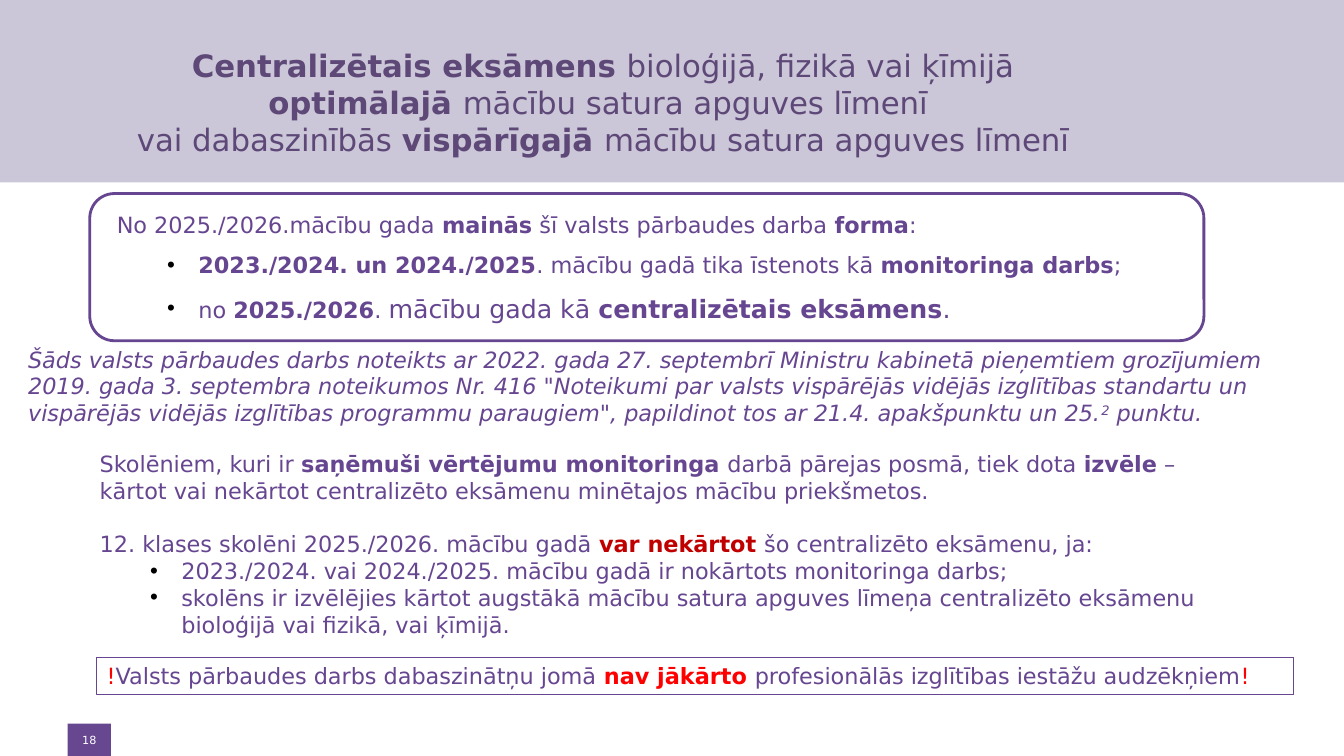
from lxml import etree
from pptx import Presentation
from pptx import util as u
from pptx.dml.color import RGBColor
from pptx.enum import shapes, text
from pptx.oxml.ns import qn

COLORS = {"purple": "664690", "badge": "664790", "title": "5D4878", "band": "CBC7D8",
          "white": "FFFFFF", "black": "000000", "dark red": "C00000", "red": "FF0000"}
FONT = "DejaVu Sans"
BODY = {"size": 16, "color": "purple"}
STYLES = {
    "plain": {},
    "bold": {"bold": True},
    "large": {"size": 18},
    "large bold": {"size": 18, "bold": True},
    "superscript": {"baseline": 30000},
    "red": {"color": "red"},
    "red bold": {"color": "red", "bold": True},
    "dark red bold": {"color": "dark red", "bold": True},
}

presentation = Presentation()
presentation.slide_width, presentation.slide_height = u.Inches(13.33), u.Inches(7.5)
slide = presentation.slides.add_slide(presentation.slide_layouts[5])


def area(left, top, width, height):
    """Turn percentages of the slide's width and height into lengths."""
    across, down = presentation.slide_width / 100, presentation.slide_height / 100
    return [round(value) for value in (left * across, top * down, width * across, height * down)]


def write(shape, paragraphs, base, spacing=1.0, **frame_format):
    """Fill a shape with (kind, runs) paragraphs; each run is (text, style name)."""
    frame = shape.text_frame
    frame.word_wrap = True
    for name, value in frame_format.items():
        setattr(frame, name, value)
    for number, (kind, runs) in enumerate(paragraphs):
        paragraph = frame.add_paragraph() if number else frame.paragraphs[0]
        paragraph.line_spacing = spacing
        paragraph.alignment = text.PP_ALIGN.CENTER if kind == "centred" else text.PP_ALIGN.LEFT
        if kind == "after gap":
            paragraph.space_before = u.Pt(18.6)
        if kind == "bullet":
            properties = paragraph._p.get_or_add_pPr()
            properties.set("marL", str(u.Inches(0.81)))
            properties.set("indent", str(u.Inches(-0.31)))
            bullet_color = etree.SubElement(properties, qn("a:buClr"))
            etree.SubElement(bullet_color, qn("a:srgbClr"), val=COLORS["black"])
            etree.SubElement(properties, qn("a:buFont"), typeface="Arial")
            etree.SubElement(properties, qn("a:buChar"), char="•")
        for words, style in runs:
            look = {"bold": False, "italic": False, **base, **STYLES[style]}
            for index, line in enumerate(words.split("\n")):
                if index:
                    paragraph.add_line_break()
                    line_break = paragraph._p.findall(qn("a:br"))[-1]
                    etree.SubElement(line_break, qn("a:rPr"), sz=str(look["size"] * 100))
                run = paragraph.add_run()
                run.text = line
                run.font.name = FONT
                run.font.size = u.Pt(look["size"])
                run.font.color.rgb = RGBColor.from_string(COLORS[look["color"]])
                run.font.bold, run.font.italic = look["bold"], look["italic"]
                if "baseline" in look:
                    run.font._element.set("baseline", str(look["baseline"]))


# Panels: preset, area, fill, line colour, line width
RECTANGLE = shapes.MSO_SHAPE.RECTANGLE
PANELS = {
    "number": (RECTANGLE, (5.03, 95.73, 3.23, 4.27), "badge", None, 0),
    "band": (RECTANGLE, (0, 0, 100, 24.13), "band", None, 0),
    "card": (shapes.MSO_SHAPE.ROUNDED_RECTANGLE, (6.68, 25.6, 82.9, 19.47), "white", "purple", 2),
    "exemption": (RECTANGLE, (7.2, 86.93, 89.05, 4.93), None, "purple", 0.75),
}
panels = {}
for name, (preset, place, fill, line, width) in PANELS.items():
    panel = slide.shapes.add_shape(preset, *area(*place))
    panel.shadow.inherit = False
    if fill:
        panel.fill.solid()
        panel.fill.fore_color.rgb = RGBColor.from_string(COLORS[fill])
    else:
        panel.fill.background()
    if line:
        panel.line.color.rgb = RGBColor.from_string(COLORS[line])
        panel.line.width = u.Pt(width)
    else:
        panel.line.fill.background()
    panels[name] = panel

small_inset = u.Inches(0.04)
write(panels["number"], [("centred", [("18", "plain")])], {"size": 8, "color": "white"},
      margin_left=small_inset, margin_right=small_inset, margin_top=small_inset,
      margin_bottom=small_inset, vertical_anchor=text.MSO_ANCHOR.MIDDLE)

# Title, brought in front of the band
title = slide.shapes.title
slide.shapes._spTree.append(title._element)
title.left, title.top, title.width, title.height = area(7.2, 5.2, 76.07, 16.67)
write(title, [("centred", [
    ("Centralizētais eksāmens ", "bold"),
    ("bioloģijā, fizikā vai ķīmijā ", "plain"),
    ("optimālajā ", "bold"),
    ("mācību satura apguves līmenī \nvai dabaszinībās ", "plain"),
    ("vispārīgajā ", "bold"),
    ("mācību satura apguves līmenī", "plain"),
])], {"size": 22, "color": "title"}, margin_left=0, vertical_anchor=text.MSO_ANCHOR.MIDDLE,
    auto_size=text.MSO_AUTO_SIZE.NONE)

# Body text: area, line spacing, base format, paragraphs
TEXTS = [
    ((1.35, 45.07, 94.9, 12.13), 1.0, {**BODY, "italic": True}, [
        ("text", [
            ("Šāds valsts pārbaudes darbs noteikts ar 2022. gada 27. septembrī Ministru kabinetā "
             "pieņemtiem grozījumiem\n2019. gada 3. septembra noteikumos Nr. 416 \"Noteikumi par "
             "valsts vispārējās vidējās izglītības standartu un vispārējās vidējās izglītības "
             "programmu paraugiem\", papildinot tos ar 21.4. apakšpunktu un 25.", "plain"),
            ("2", "superscript"), (" punktu.", "plain")]),
    ]),
    ((7.95, 25.47, 80.35, 17.33), 1.5, BODY, [
        ("text", [("No 2025./2026.mācību gada ", "plain"), ("mainās", "bold"),
                  (" šī valsts pārbaudes darba ", "plain"), ("forma", "bold"), (":", "plain")]),
        ("bullet", [("2023./2024. un 2024./2025", "bold"),
                    (". mācību gadā tika īstenots kā ", "plain"),
                    ("monitoringa darbs", "bold"), (";", "plain")]),
        ("bullet", [("no ", "plain"), ("2025./2026", "bold"), (". ", "plain"),
                    ("mācību gada kā ", "large"), ("centralizētais eksāmens", "large bold"),
                    (".", "large")]),
    ]),
    ((6.68, 58.93, 84.32, 26.53), 1.0, BODY, [
        ("text", [("Skolēniem, kuri ir ", "plain"), ("saņēmuši vērtējumu monitoringa ", "bold"),
                  ("darbā pārejas posmā, tiek dota ", "plain"), ("izvēle", "bold"),
                  (" – kārtot vai nekārtot centralizēto eksāmenu minētajos mācību "
                   "priekšmetos.", "plain")]),
        ("after gap", [("12. klases skolēni 2025./2026. mācību gadā ", "plain"),
                       ("var nekārtot ", "dark red bold"),
                       ("šo centralizēto eksāmenu, ja:", "plain")]),
        ("bullet", [("2023./2024. vai 2024./2025. mācību gadā ir nokārtots monitoringa "
                     "darbs;", "plain")]),
        ("bullet", [("skolēns ir izvēlējies kārtot augstākā mācību satura apguves līmeņa "
                     "centralizēto eksāmenu bioloģijā vai fizikā, vai ķīmijā.", "plain")]),
    ]),
]
for place, spacing, base, paragraphs in TEXTS:
    write(slide.shapes.add_textbox(*area(*place)), paragraphs, base, spacing)

write(panels["exemption"], [("text", [
    ("!", "red"),
    ("Valsts pārbaudes darbs dabaszinātņu jomā ", "plain"),
    ("nav jākārto ", "red bold"),
    ("profesionālās izglītības iestāžu audzēkņiem", "plain"),
    ("!", "red"),
])], BODY, vertical_anchor=text.MSO_ANCHOR.TOP)

presentation.save("out.pptx")
